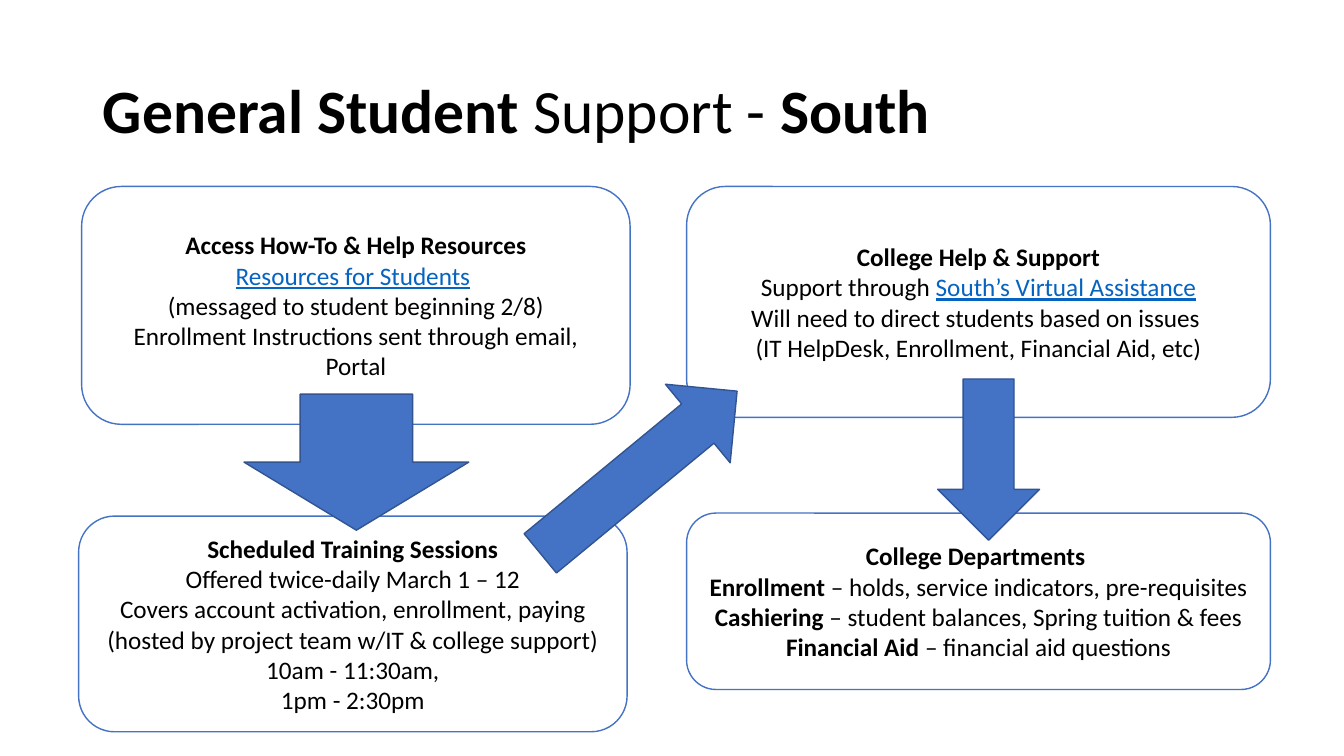
from pptx import Presentation
from pptx import util as u
from pptx.dml.color import RGBColor
from pptx.enum import shapes, text

COLORS = {
    "ink": "000000",
    "paper": "FFFFFF",
    "accent": "4472C4",
    "arrow_edge": "325491",
    "link": "0563C1",
}
BOLD = {"bold": True}
LINK = {"color_name": "link", "underline": True}


def color(name):
    return RGBColor.from_string(COLORS[name])


def add_run(paragraph, words, size=18, bold=False, color_name="ink", underline=False):
    run = paragraph.add_run()
    run.text = words
    run.font.name = "Calibri"
    run.font.size = u.Pt(size)
    run.font.bold = bold
    run.font.underline = underline
    run.font.color.rgb = color(color_name)


class SupportSlide:
    def __init__(self, deck):
        self.slide = deck.slides.add_slide(deck.slide_layouts[5])

    def fill_text(self, frame, lines, align, size=18):
        frame.word_wrap = True
        frame.vertical_anchor = text.MSO_ANCHOR.MIDDLE
        for number, line in enumerate(lines):
            paragraph = frame.paragraphs[0] if number == 0 else frame.add_paragraph()
            paragraph.alignment = align
            for words, style in line:
                add_run(paragraph, words, size, **style)

    def title(self, left, top, width, height, line):
        heading = self.slide.shapes.title
        heading.left, heading.top = u.Inches(left), u.Inches(top)
        heading.width, heading.height = u.Inches(width), u.Inches(height)
        self.fill_text(heading.text_frame, [line], text.PP_ALIGN.LEFT, size=44)
        heading.text_frame.paragraphs[0].line_spacing = 0.9

    def shape(self, kind, box, fill, edge):
        added = self.slide.shapes.add_shape(kind, *map(u.Inches, box))
        added.shadow.inherit = False
        added.fill.solid()
        added.fill.fore_color.rgb = color(fill)
        added.line.color.rgb = color(edge)
        added.line.width = u.Pt(1)
        return added

    def card(self, box, lines):
        card = self.shape(shapes.MSO_SHAPE.ROUNDED_RECTANGLE, box, "paper", "accent")
        self.fill_text(card.text_frame, lines, text.PP_ALIGN.CENTER)

    def arrow(self, box, rotation=0):
        arrow = self.shape(shapes.MSO_SHAPE.DOWN_ARROW, box, "accent", "arrow_edge")
        arrow.rotation = rotation


def main():
    deck = Presentation()
    deck.slide_width, deck.slide_height = u.Inches(13.33), u.Inches(7.5)
    support = SupportSlide(deck)

    support.title(0.92, 0.4, 11.5, 1.45, [
        ("General Student", BOLD), (" Support - ", {}), ("South", BOLD)])

    support.card((0.81, 1.85, 5.44, 2.36), [
        [("Access How-To & Help Resources", BOLD)],
        [("Resources for Students", LINK), (" ", {})],
        [("(messaged to student beginning 2/8)", {})],
        [("Enrollment Instructions sent through email, Portal", {})],
    ])
    support.card((6.81, 1.85, 5.79, 2.29), [
        [("College Help & Support", BOLD)],
        [("Support through ", {}), ("South’s Virtual Assistance", LINK)],
        [("Will need to direct students based on issues ", {})],
        [("(IT HelpDesk, Enrollment, Financial Aid, etc)", {})],
    ])
    support.card((6.81, 5.09, 5.79, 1.75), [
        [("College Departments ", BOLD)],
        [("Enrollment", BOLD), (" – holds, service indicators, pre-requisites", {})],
        [("Cashiering", BOLD), (" – student balances, Spring tuition & fees", {})],
        [("Financial Aid ", BOLD), ("– financial aid questions", {})],
    ])
    support.card((0.78, 5.12, 5.44, 2.14), [
        [("Scheduled Training Sessions", BOLD)],
        [("Offered twice-daily March 1 – 12", {})],
        [("Covers account activation, enrollment, paying", {})],
        [("(hosted by project team w/IT & college support)", {})],
        [("10am - 11:30am,", {})],
        [("1pm - 2:30pm", {})],
    ])

    support.arrow((9.3, 3.76, 1.01, 1.6))
    support.arrow((2.42, 3.91, 2.23, 1.35))
    support.arrow((5.83, 3.42, 1.01, 2.53), rotation=230.5)

    deck.save("out.pptx")


if __name__ == "__main__":
    main()
